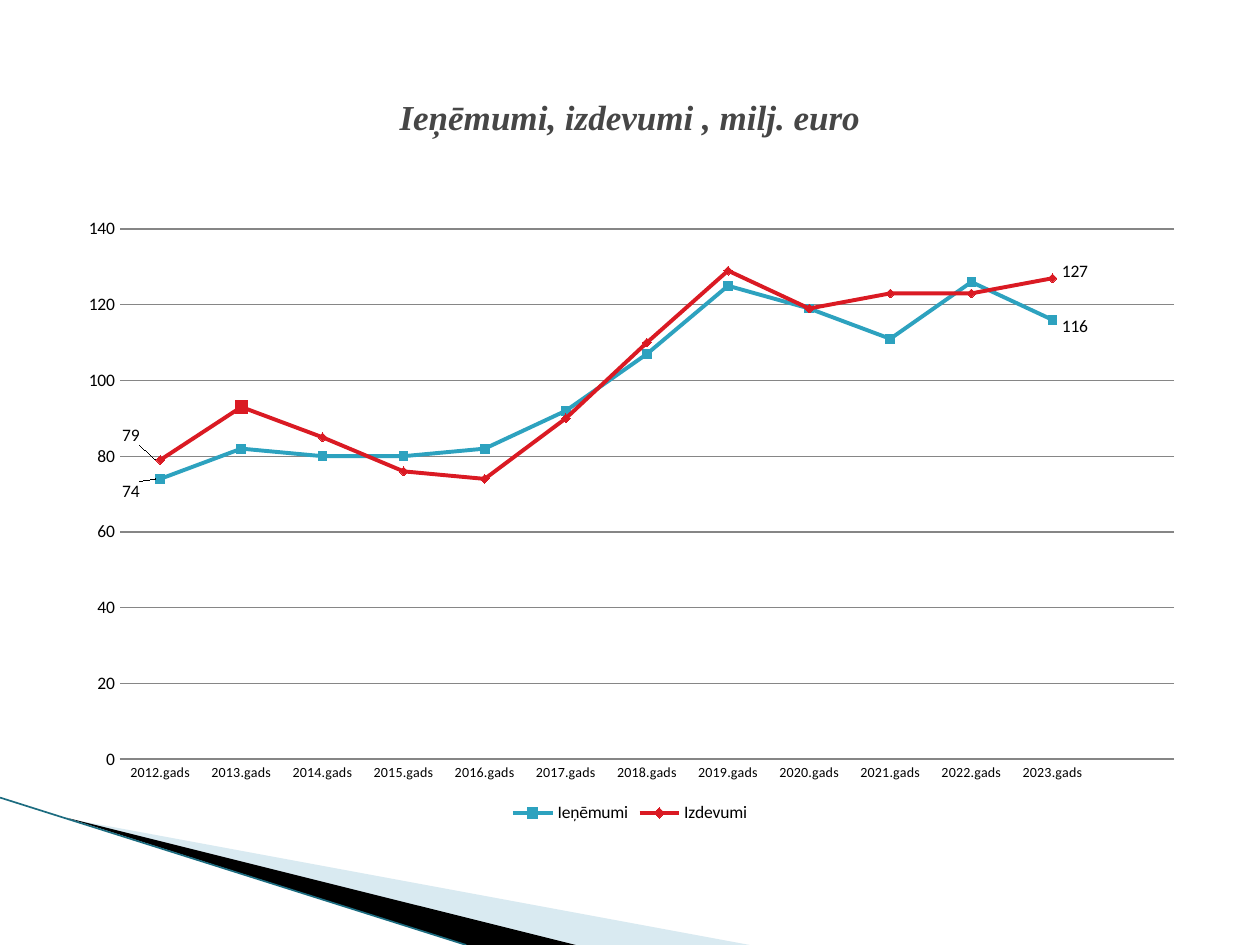
import pptx
import pptx.chart.data
import pptx.dml.color
import pptx.enum.chart
import pptx.enum.shapes
import pptx.enum.text
import pptx.oxml
import pptx.oxml.ns
import pptx.util
from lxml import etree

Inches, Pt = pptx.util.Inches, pptx.util.Pt
RGBColor = pptx.dml.color.RGBColor
Marker = pptx.enum.chart.XL_MARKER_STYLE
Position = pptx.enum.chart.XL_LABEL_POSITION

BLACK = RGBColor(0, 0, 0)
TITLE_GREY = RGBColor(0x46, 0x46, 0x46)
GRID_GREY = RGBColor(0x86, 0x86, 0x86)
PALE_BLUE = RGBColor(0xA0, 0xCB, 0xDC)
DARK_TEAL = RGBColor(0x1C, 0x6C, 0x80)
TEAL = RGBColor(0x2D, 0xA2, 0xBF)
RED = RGBColor(0xDA, 0x1A, 0x23)

TITLE = "Ieņēmumi, izdevumi , milj. euro"
YEARS = range(2012, 2024)
LAST = len(YEARS) - 1
# Labels: point index, side, shift as shares of the chart's width and height
SERIES = [
    {"name": "Ieņēmumi", "color": TEAL, "marker": Marker.SQUARE,
     "values": [74, 82, 80, 80, 82, 92, 107, 125, 119, 111, 126, 116],
     "labels": [(0, Position.LEFT, -0.01, 0.02), (LAST, Position.RIGHT, 0, 0.01)]},
    {"name": "Izdevumi", "color": RED, "marker": Marker.DIAMOND,
     "values": [79, 93, 85, 76, 74, 90, 110, 129, 119, 123, 123, 127],
     "labels": [(0, Position.LEFT, -0.01, -0.04), (LAST, Position.RIGHT, 0, -0.01)]},
]
# Corner wedges: outline in inches, colour, opacity in percent
WEDGES = [
    ([(0.55, 6.5), (5.95, 7.5), (4.56, 7.5)], PALE_BLUE, 40),
    ([(0.53, 6.49), (4.57, 7.5), (3.7, 7.5)], BLACK, 100),
]
PLOT_AREA = {"x": 0.05, "y": 0.04, "w": 0.93, "h": 0.85}


def add_wedge(slide, corners, color, opacity):
    points = [(Inches(x), Inches(y)) for x, y in corners]
    builder = slide.shapes.build_freeform(*points[0])
    builder.add_line_segments(points[1:], close=True)
    shape = builder.convert_to_shape()
    shape.shadow.inherit = False
    shape.fill.solid()
    shape.fill.fore_color.rgb = color
    shape.line.fill.background()
    if opacity < 100:
        color_element = shape._element.spPr.find(".//" + pptx.oxml.ns.qn("a:srgbClr"))
        etree.SubElement(color_element, pptx.oxml.ns.qn("a:alpha"), val=str(opacity * 1000))


def add_edge_line(slide):
    line = slide.shapes.add_connector(
        pptx.enum.shapes.MSO_CONNECTOR.STRAIGHT,
        Inches(0), Inches(6.33), Inches(3.7), Inches(7.5))
    line.line.color.rgb = DARK_TEAL
    line.line.width = Pt(0.95)
    etree.SubElement(line._element.spPr, pptx.oxml.ns.qn("a:effectLst"))


def add_title(slide):
    box = slide.shapes.add_textbox(Inches(0.5), Inches(0.3), Inches(9), Inches(1.25))
    frame = box.text_frame
    frame.word_wrap = True
    frame.vertical_anchor = pptx.enum.text.MSO_ANCHOR.MIDDLE
    frame.text = TITLE
    paragraph = frame.paragraphs[0]
    paragraph.alignment = pptx.enum.text.PP_ALIGN.CENTER
    font = paragraph.runs[0].font
    font.name, font.size = "Times New Roman", Pt(20)
    font.bold = font.italic = True
    font.color.rgb = TITLE_GREY


def style_font(font, size):
    font.name, font.size = "Calibri", Pt(size)
    font.color.rgb = BLACK


def manual_layout(inner=False, **shares):
    items = '<c:layoutTarget val="inner"/><c:xMode val="edge"/><c:yMode val="edge"/>' if inner else ""
    items += "".join(f'<c:{key} val="{value}"/>' for key, value in shares.items())
    return pptx.oxml.parse_xml(
        f'<c:layout {pptx.oxml.ns.nsdecls("c")}><c:manualLayout>{items}</c:manualLayout></c:layout>')


def style_marker(marker, style, size, color):
    marker.style, marker.size = style, size
    marker.format.fill.solid()
    marker.format.fill.fore_color.rgb = color
    marker.format.line.color.rgb = color


def style_series(series, content):
    series.smooth = False
    series.format.line.color.rgb = content["color"]
    series.format.line.width = Pt(2.25)
    style_marker(series.marker, content["marker"], 5, content["color"])
    series.data_labels.show_value = False
    for index, side, x, y in content["labels"]:
        label = series.points[index].data_label
        style_font(label.font, 10)
        label.position = side
        label_element = series._element.xpath(f"c:dLbls/c:dLbl[c:idx/@val='{index}']")[0]
        label_element.insert(1, manual_layout(x=x, y=y))


def add_line_chart(slide):
    data = pptx.chart.data.CategoryChartData(number_format="#,##0")
    data.categories = [f"{year}.gads" for year in YEARS] + [""]
    for content in SERIES:
        data.add_series(content["name"], content["values"] + [None])
    chart = slide.shapes.add_chart(
        pptx.enum.chart.XL_CHART_TYPE.LINE_MARKERS,
        Inches(0.5), Inches(1.62), Inches(9), Inches(4.95), data).chart
    style_font(chart.font, 10)
    chart.has_title = False
    chart.has_legend = True
    chart.legend.position = pptx.enum.chart.XL_LEGEND_POSITION.BOTTOM
    chart.legend.include_in_layout = False
    style_font(chart.legend.font, 10)

    values, years = chart.value_axis, chart.category_axis
    values.minimum_scale, values.maximum_scale, values.major_unit = 0, 140, 20
    values.tick_labels.number_format = "#,##0"
    values.tick_labels.number_format_is_linked = False
    values.format.line.fill.background()
    for line in (values.major_gridlines.format.line, years.format.line):
        line.color.rgb = GRID_GREY
        line.width = Pt(0.75)
    for axis, size in ((values, 10), (years, 8)):
        axis.major_tick_mark = pptx.enum.chart.XL_TICK_MARK.NONE
        style_font(axis.tick_labels.font, size)

    plot = chart.plots[0]
    plot.vary_by_categories = False
    for series, content in zip(plot.series, SERIES):
        style_series(series, content)
    style_marker(plot.series[1].points[1].marker, Marker.SQUARE, 7, RED)
    point_line = plot.series[1].points[1].format.line
    point_line.color.rgb, point_line.width = RED, Pt(2.25)

    plot_area = chart._chartSpace.chart.plotArea
    for layout in plot_area.findall(pptx.oxml.ns.qn("c:layout")):
        plot_area.remove(layout)
    plot_area.insert(0, manual_layout(inner=True, **PLOT_AREA))


def main():
    presentation = pptx.Presentation()
    presentation.slide_width, presentation.slide_height = Inches(10), Inches(7.5)
    slide = presentation.slides.add_slide(presentation.slide_layouts[6])
    for wedge in WEDGES:
        add_wedge(slide, *wedge)
    add_edge_line(slide)
    add_title(slide)
    add_line_chart(slide)
    presentation.save("out.pptx")


if __name__ == "__main__":
    main()
